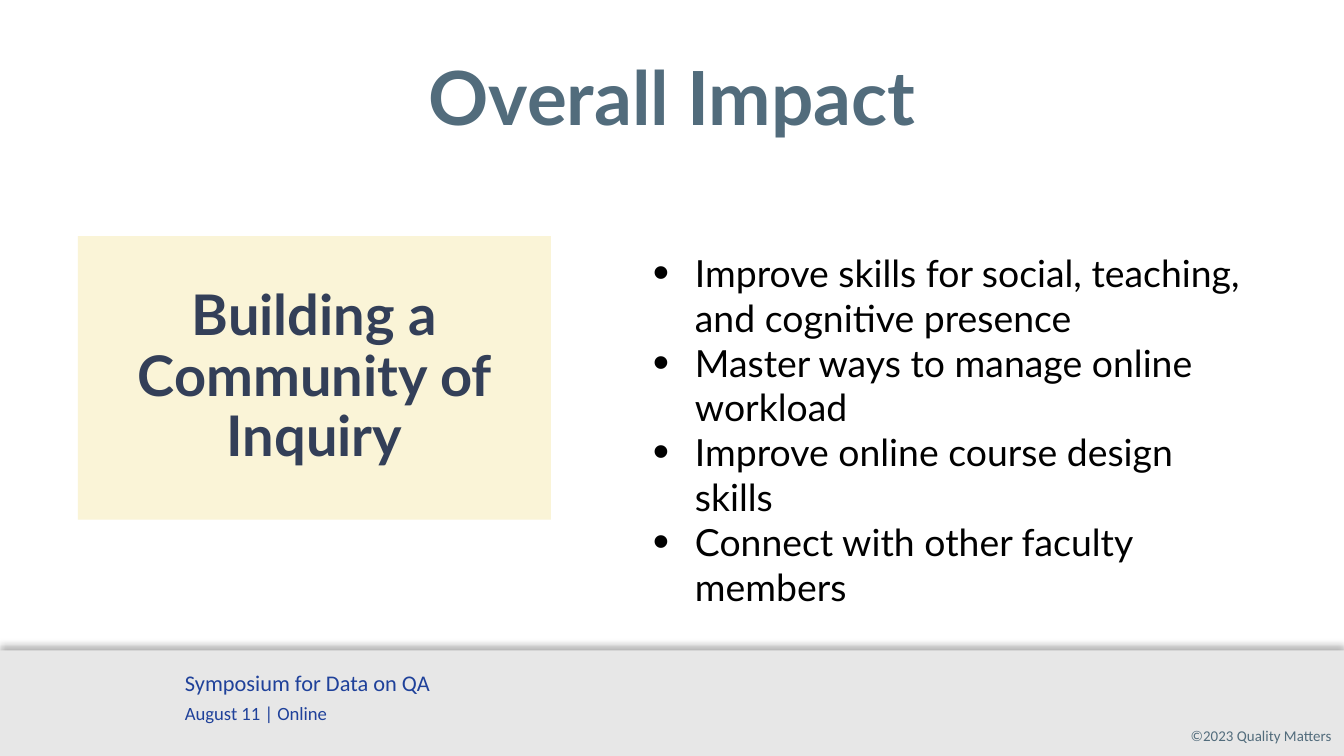
from lxml import etree
from pptx import Presentation
from pptx import util as u
from pptx.dml.color import RGBColor
from pptx.enum import shapes, text
from pptx.oxml import ns

SLATE = RGBColor(0x52, 0x6C, 0x7C)
NAVY = RGBColor(0x33, 0x3F, 0x58)
BLUE = RGBColor(0x1F, 0x41, 0x9A)
BLACK = RGBColor(0, 0, 0)
CREAM = RGBColor(0xFA, 0xF4, 0xD7)
GREY = RGBColor(0xE7, 0xE7, 0xE7)
WIDTH, HEIGHT = 720, 405
LEFT, MID, RIGHT = text.PP_ALIGN.LEFT, text.PP_ALIGN.CENTER, text.PP_ALIGN.RIGHT
POINTS = [
    "Improve skills for social, teaching, and cognitive presence",
    "Master ways to manage online workload",
    "Improve online course design skills",
    "Connect with other faculty members",
]


def add(parent, tag, **attrs):
    return etree.SubElement(parent, ns.qn(tag), {k: str(v) for k, v in attrs.items()})


class Deck:
    head_font = "Lato"
    foot_font = "Calibri"

    def __init__(self):
        self.prs = Presentation()
        self.prs.slide_width, self.prs.slide_height = u.Pt(WIDTH), u.Pt(HEIGHT)
        self.slide = self.prs.slides.add_slide(self.prs.slide_layouts[5])

    def frame(self, shape, inset=(7.2, 3.6, 7.2, 3.6), middle=False):
        tf = shape.text_frame
        tf.word_wrap = True
        tf.auto_size = text.MSO_AUTO_SIZE.NONE
        tf.margin_left, tf.margin_top, tf.margin_right, tf.margin_bottom = map(u.Pt, inset)
        anchor = text.MSO_ANCHOR
        tf.vertical_anchor = anchor.MIDDLE if middle else anchor.TOP
        return tf

    def format(self, para, size, color, font, bold=False, align=LEFT):
        para.alignment = align
        for run in para.runs:
            run.font.size, run.font.name, run.font.bold = u.Pt(size), font, bold
            run.font.color.rgb = color

    def title(self, words, box):
        shape = self.slide.shapes.title
        shape.left, shape.top, shape.width, shape.height = map(u.Pt, box)
        tf = self.frame(shape, middle=True)
        tf.text = words
        self.format(tf.paragraphs[0], 40, SLATE, self.head_font, True, MID)

    def panel(self, box, fill):
        shape = self.slide.shapes.add_shape(shapes.MSO_SHAPE.RECTANGLE, *map(u.Pt, box))
        shape.fill.solid()
        shape.fill.fore_color.rgb = fill
        shape.line.fill.background()
        shape.shadow.inherit = False
        return shape

    def band(self, box):
        shape = self.panel(box, GREY)
        effects = shape._element.spPr.find(ns.qn("a:effectLst"))
        shadow = add(effects, "a:outerShdw", blurRad=u.Pt(4), dist=u.Pt(3),
                     dir=270 * 60000, algn="b", rotWithShape=0)
        add(add(shadow, "a:srgbClr", val=BLACK), "a:alpha", val=29000)

    def card(self, words, box):
        tf = self.frame(self.panel(box, CREAM), (8.64,) * 4, True)
        tf.text = words
        para = tf.paragraphs[0]
        para.line_spacing = 0.9
        self.format(para, 30, NAVY, self.head_font, True, MID)

    def note(self, lines, box, color, align=LEFT, inset=(7.2, 3.6, 7.2, 3.6)):
        tf = self.frame(self.slide.shapes.add_textbox(*map(u.Pt, box)), inset)
        tf.text = "\n".join(words for words, size in lines)
        for para, (words, size) in zip(tf.paragraphs, lines):
            self.format(para, size, color, self.foot_font, align=align)
        for para in tf.paragraphs[1:]:
            para.space_before = u.Pt(3)

    def bullets(self, items, box):
        tf = self.frame(self.slide.shapes.add_textbox(*map(u.Pt, box)))
        tf.text = "\n".join(items)
        for para in tf.paragraphs:
            props = para._p.get_or_add_pPr()
            props.set("marL", str(u.Pt(22.5)))
            props.set("indent", str(u.Pt(-22.5)))
            add(add(props, "a:buClr"), "a:srgbClr", val=BLACK)
            add(props, "a:buSzPct", val=125000)
            add(props, "a:buFont", typeface="Arial")
            add(props, "a:buChar", char="•")
            self.format(para, 20, BLACK, self.head_font)


def main():
    deck = Deck()

    # Footer band
    top = 348.5
    deck.band((0, top, WIDTH, HEIGHT - top))
    deck.note([("©2023 Quality Matters", 8)], (599, 386, 114.5, 17), SLATE,
              RIGHT, (7.2, 3.6, 0, 3.6))
    deck.note([("Symposium for Data on QA", 12), ("August 11 | Online", 10)],
              (92, 355, 460, 37), BLUE)

    # Title
    deck.title("Overall Impact", (0, 26, WIDTH, 50))

    # Theme card and its benefits
    deck.card("Building a Community of Inquiry", (41.7, 126.5, 253.5, 152))
    deck.bullets(POINTS, (342.7, 130.5, 335.5, 144))

    deck.prs.save("out.pptx")


if __name__ == "__main__":
    main()
